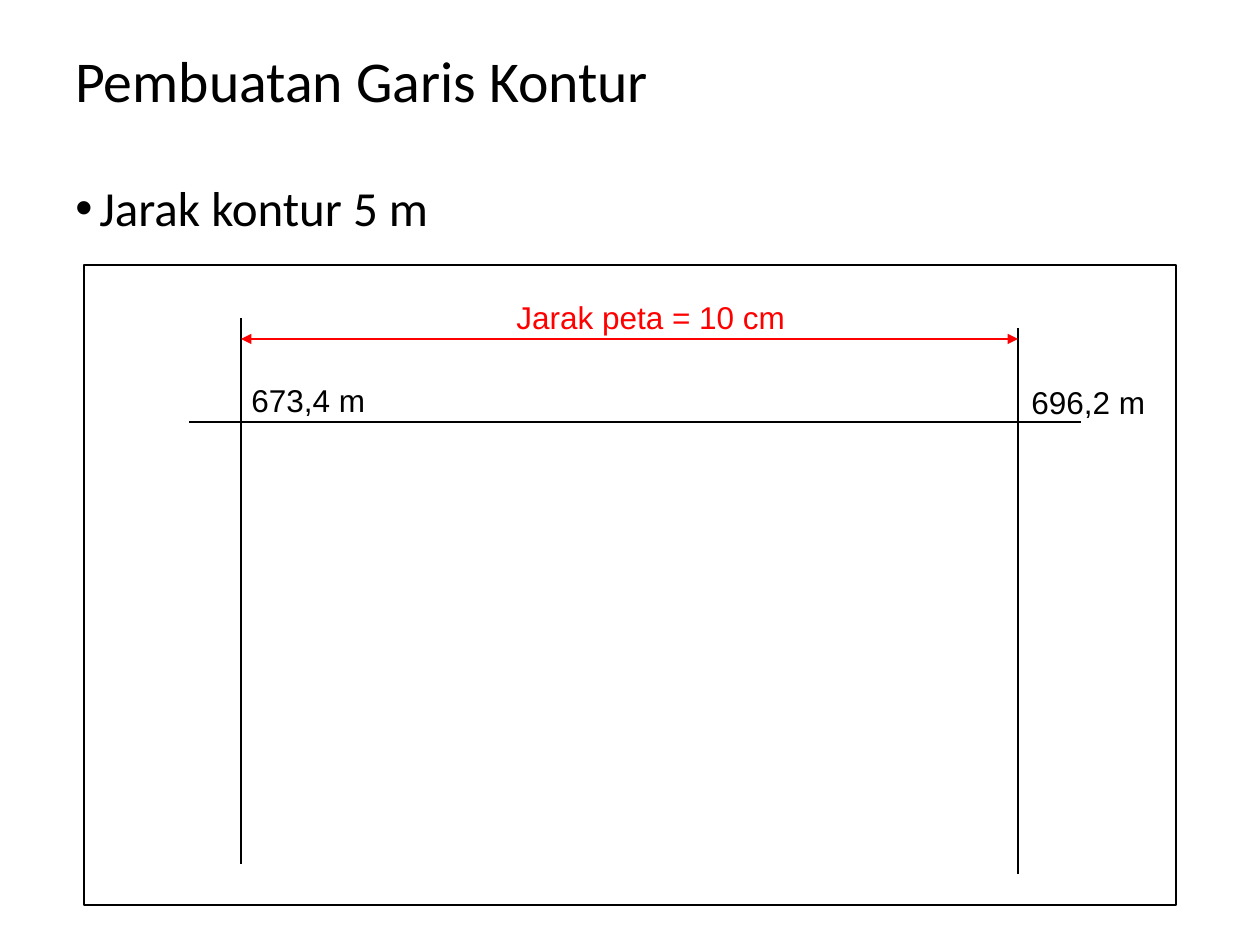
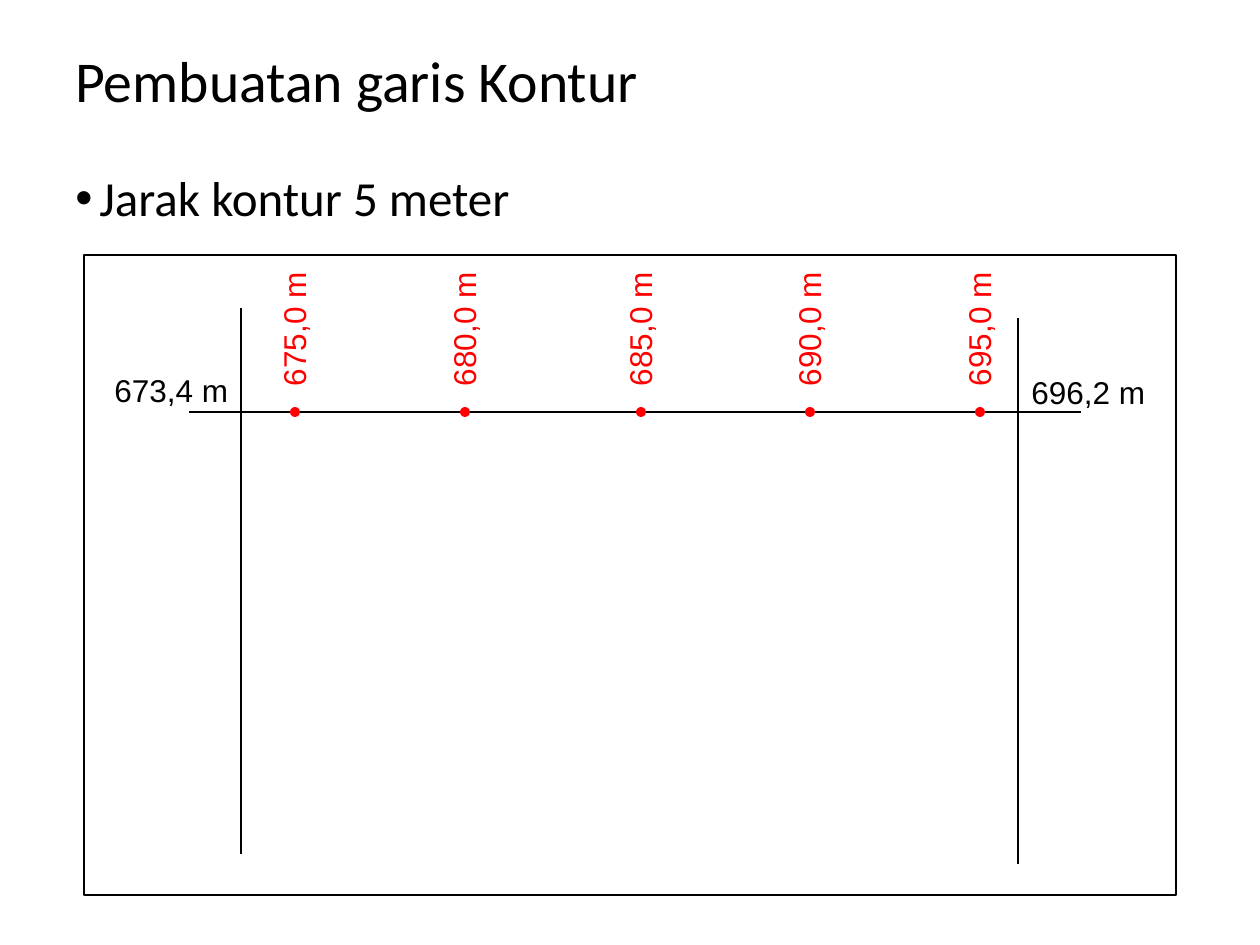
import dataclasses

import lxml.etree
import pptx
import pptx.dml.color
import pptx.enum.shapes
import pptx.enum.text
import pptx.oxml.ns
import pptx.util

SCALE = 914400 / 126
SHAPE = pptx.enum.shapes.MSO_SHAPE
FIT = pptx.enum.text.MSO_AUTO_SIZE
ANCHOR = pptx.enum.text.MSO_ANCHOR
qn = pptx.oxml.ns.qn


@dataclasses.dataclass(frozen=True)
class Theme:
    """Colours, fonts and type sizes of the slides."""
    ink: str = "000000"
    mark: str = "FF0000"
    paper: str = "FFFFFF"
    head: str = "Calibri"
    label: str = "Arial"
    title: int = 33
    body: int = 28
    note: int = 18
    line: float = 0.75


THEME = Theme()
DOTS = (211, 381, 557, 726, 896)
LEVELS = range(675, 700, 5)


def px(num):
    """Turn pixels into EMU."""
    return pptx.util.Emu(round(num * SCALE))


def rgb(tone):
    """Turn a hex string into a colour."""
    return pptx.dml.color.RGBColor.from_string(tone)


def write(parts, box, text, font, size, tone=THEME.ink):
    """Add a text box with one run; return its shape and paragraph."""
    shape = parts.add_textbox(*map(px, box))
    para = shape.text_frame.paragraphs[0]
    run = para.add_run()
    run.text = text
    run.font.name = font
    run.font.size = pptx.util.Pt(size)
    run.font.color.rgb = rgb(tone)
    return shape, para


def label(parts, x, y, text, tone=THEME.ink, width=139):
    """Add a drawing label that does not wrap."""
    shape, _ = write(parts, (x, y, width, 50), text, THEME.label, THEME.note, tone)
    shape.text_frame.word_wrap = False
    shape.text_frame.auto_size = FIT.SHAPE_TO_FIT_TEXT
    return shape


def rule(parts, ends, tone=THEME.ink, arrows=False):
    """Add a thin line, with arrowheads at both ends if asked."""
    kind = pptx.enum.shapes.MSO_CONNECTOR.STRAIGHT
    line = parts.add_connector(kind, *map(px, ends))
    line.line.color.rgb = rgb(tone)
    line.line.width = pptx.util.Pt(THEME.line)
    props = line.element.spPr
    if arrows:
        for tag in ("a:headEnd", "a:tailEnd"):
            lxml.etree.SubElement(props.find(qn("a:ln")), qn(tag), type="triangle")
    lxml.etree.SubElement(props, qn("a:effectLst"))


def solid(parts, kind, box, fill, edge=None):
    """Add a filled shape, outlined only if an edge colour is given."""
    shape = parts.add_shape(kind, *map(px, box))
    shape.shadow.inherit = False
    shape.fill.solid()
    shape.fill.fore_color.rgb = rgb(fill)
    if edge:
        shape.line.color.rgb = rgb(edge)
        shape.line.width = pptx.util.Pt(THEME.line)
    else:
        shape.line.fill.background()


def heading(slide, box, text):
    """Write the slide title."""
    shape, para = write(slide.shapes, box, text, THEME.head, THEME.title)
    shape.text_frame.word_wrap = True
    shape.text_frame.vertical_anchor = ANCHOR.MIDDLE
    para.line_spacing = 0.9


def bullet(slide, box, text):
    """Write the bulleted contour interval."""
    shape, para = write(slide.shapes, box, text, THEME.head, THEME.body)
    shape.text_frame.word_wrap = True
    para.line_spacing = 0.9
    props = para._p.get_or_add_pPr()
    props.set("marL", str(px(24)))
    props.set("indent", str(px(-24)))
    lxml.etree.SubElement(props, qn("a:buFont"), typeface="Arial")
    lxml.etree.SubElement(props, qn("a:buChar"), char="•")


def sketch(slide, box, start):
    """Draw the frame, axis and end heights; return the group's shapes."""
    left, top, width, height = box
    parts = slide.shapes.add_group_shape().shapes
    solid(parts, SHAPE.RECTANGLE, box, THEME.paper, THEME.ink)
    for x1, y1, x2, y2 in ((105, 157, 997, 157), (157, 53, 157, 599), (934, 63, 934, 609)):
        rule(parts, (left + x1, top + y1, left + x2, top + y2))
    label(parts, left + start, top + 110, "673,4 m")
    label(parts, left + 935, top + 112, "696,2 m")
    return parts


def span(parts, box):
    """Add the map distance arrow and its label."""
    left, top = box[:2]
    rule(parts, (left + 157, top + 74, left + 934, top + 74), THEME.mark, True)
    label(parts, left + 420, top + 27, "Jarak peta = 10 cm", THEME.mark, 294)


def points(parts, box):
    """Mark each contour height on the axis with an upright label."""
    left, top = box[:2]
    for x, level in zip(DOTS, LEVELS):
        text = label(parts, left + x - 71, top + 49, f"{level},0 m", THEME.mark)
        text.rotation = 270
    for x in DOTS:
        solid(parts, SHAPE.OVAL, (left + x - 5, top + 152, 10, 10), THEME.mark)


def page(deck, title, text, body, frame, start, detail):
    """Build one slide with its heading, bullet and drawing."""
    slide = deck.slides.add_slide(deck.slide_layouts[6])
    heading(slide, (63, 38, 1134, 91), title)
    bullet(slide, body, text)
    detail(sketch(slide, frame, start), frame)


def main():
    """Build and save the deck."""
    deck = pptx.Presentation()
    deck.slide_width, deck.slide_height = px(1260), px(945)
    page(deck, "Pembuatan Garis Kontur", "Jarak kontur 5 m",
         (63, 178, 1134, 708), (84, 265, 1092, 640), 155, span)
    page(deck, "Pembuatan garis Kontur", "Jarak kontur 5 meter",
         (63, 168, 1134, 728), (84, 255, 1092, 640), 18, points)
    deck.save("out.pptx")


if __name__ == "__main__":
    main()
